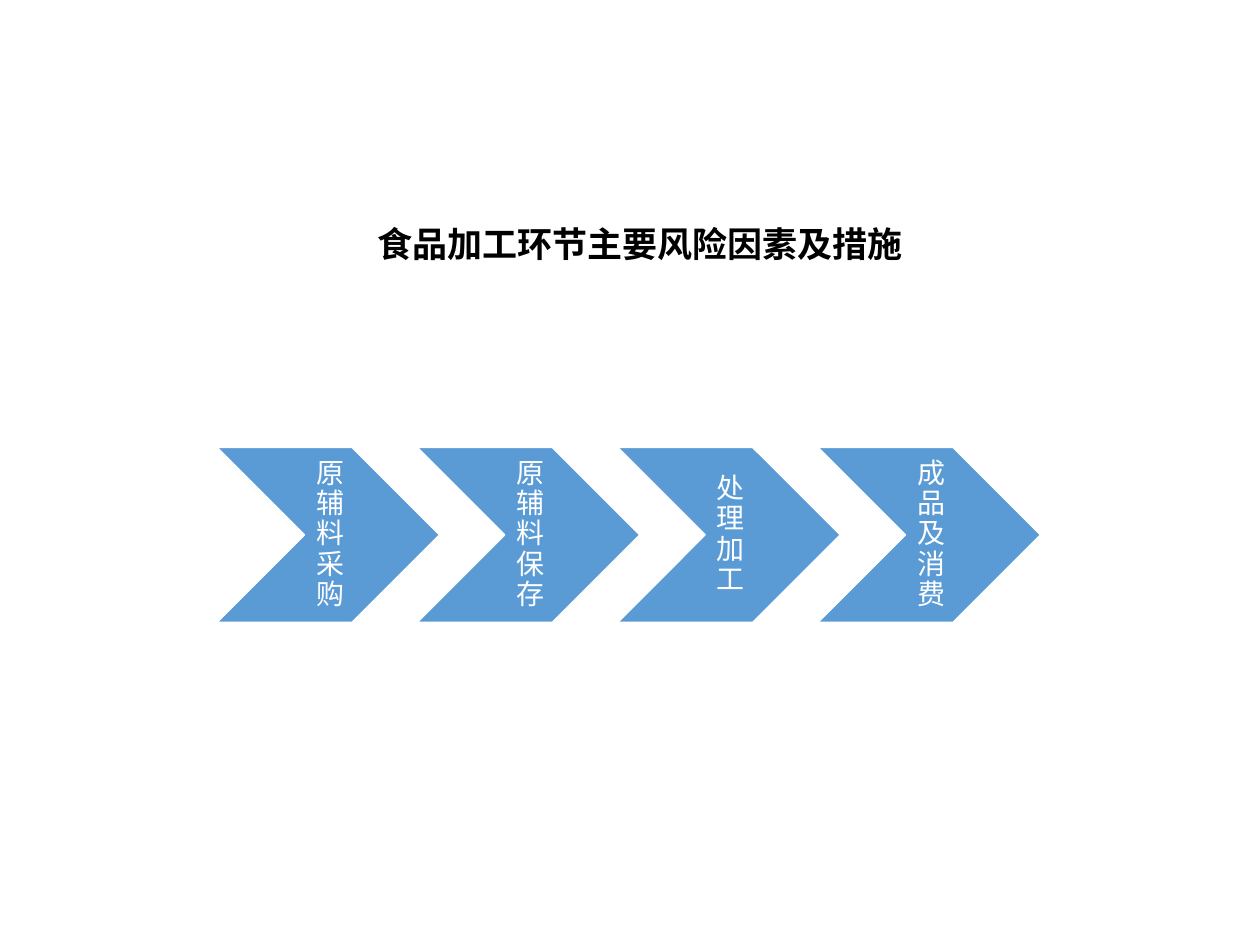
from dataclasses import dataclass

from pptx import Presentation
from pptx.dml.color import RGBColor
from pptx.enum.shapes import MSO_SHAPE
from pptx.enum.text import MSO_ANCHOR, MSO_AUTO_SIZE, PP_ALIGN
from pptx.util import Inches, Pt

# Content
TITLE = "食品加工环节主要风险因素及措施"
STAGES = ["原辅料采购", "原辅料保存", "处理加工", "成品及消费"]


@dataclass(frozen=True)
class Theme:
    title_color: RGBColor = RGBColor(0, 0, 0)
    chevron_fill: RGBColor = RGBColor(0x5B, 0x9B, 0xD5)
    white: RGBColor = RGBColor(255, 255, 255)
    title_font: str = "Arial"
    label_font: str = "Calibri"
    title_size: Pt = Pt(20)
    label_size: Pt = Pt(16)


THEME = Theme()

# Stage row, in inches
ROW_LEFT, ROW_TOP, STEP = 1.72, 3.55, 1.59
CHEVRON_WIDTH, CHEVRON_HEIGHT = 1.77, 1.39
LABEL_OFFSET, LABEL_WIDTH = 0.69, 0.37


def box(left, top, width, height):
    return [Inches(value) for value in (left, top, width, height)]


def set_text(shape, text, font_name, size, color, bold=False):
    frame = shape.text_frame
    frame.text = text
    frame.word_wrap = True
    frame.auto_size = MSO_AUTO_SIZE.NONE
    frame.vertical_anchor = MSO_ANCHOR.MIDDLE
    paragraph = frame.paragraphs[0]
    paragraph.alignment = PP_ALIGN.CENTER
    font = paragraph.runs[0].font
    font.name, font.size, font.bold = font_name, size, bold
    font.color.rgb = color


def add_stage(slide, left, name):
    group = slide.shapes.add_group_shape()
    chevron = group.shapes.add_shape(
        MSO_SHAPE.CHEVRON, *box(left, ROW_TOP, CHEVRON_WIDTH, CHEVRON_HEIGHT))
    chevron.shadow.inherit = False
    chevron.fill.solid()
    chevron.fill.fore_color.rgb = THEME.chevron_fill
    chevron.line.color.rgb = THEME.white
    chevron.line.width = Pt(1)

    # The label is one character wide, so the name reads downwards
    label = group.shapes.add_textbox(
        *box(left + LABEL_OFFSET, ROW_TOP, LABEL_WIDTH, CHEVRON_HEIGHT))
    set_text(label, name, THEME.label_font, THEME.label_size, THEME.white)
    frame = label.text_frame
    frame.margin_left = Inches(0.07)
    frame.margin_top = frame.margin_right = frame.margin_bottom = Inches(0.02)
    frame.paragraphs[0].line_spacing = 0.9


def main():
    presentation = Presentation()
    presentation.slide_width, presentation.slide_height = Inches(10), Inches(7.5)
    slide = presentation.slides.add_slide(presentation.slide_layouts[5])

    # Title
    title = slide.shapes.title
    title.left, title.top, title.width, title.height = box(0.99, 1.71, 8.18, 0.44)
    set_text(title, TITLE, THEME.title_font, THEME.title_size,
             THEME.title_color, bold=True)

    # Process stages
    for index, name in enumerate(STAGES):
        add_stage(slide, ROW_LEFT + index * STEP, name)

    presentation.save("out.pptx")


if __name__ == "__main__":
    main()
